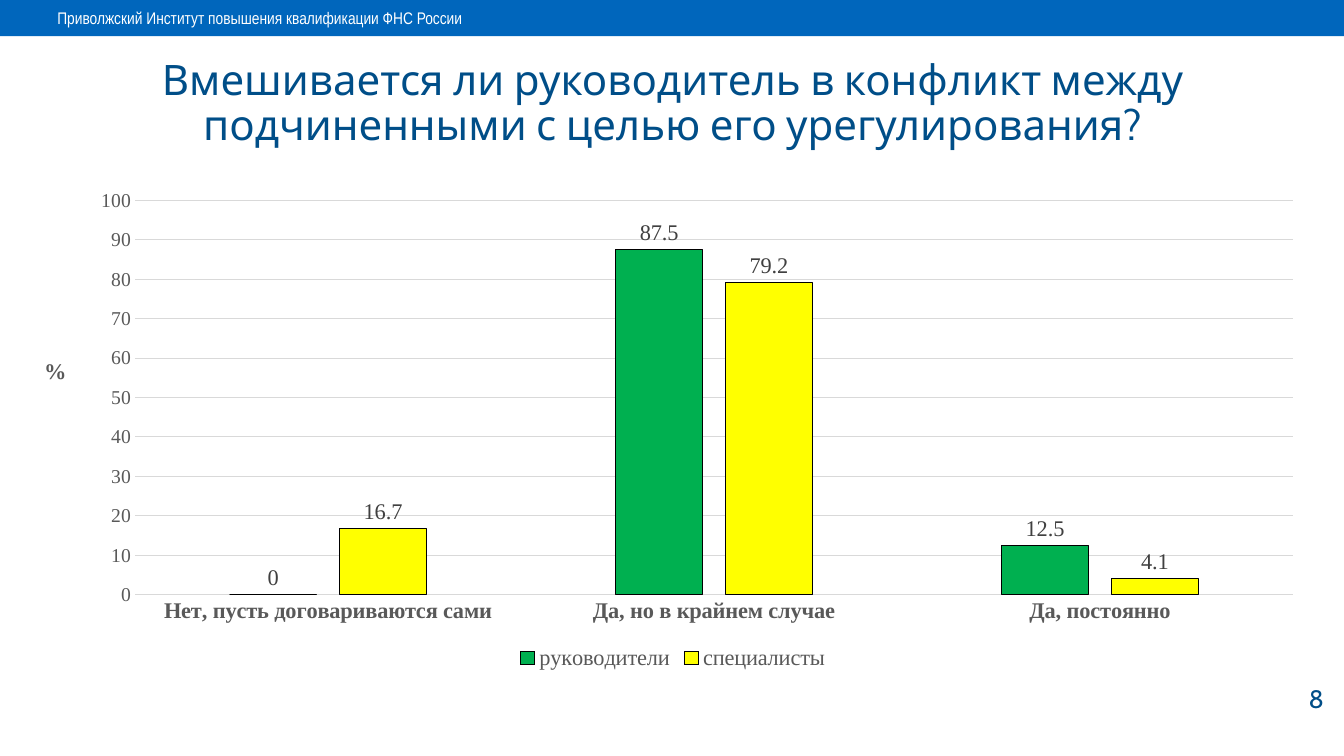
"""Builds a survey slide with a clustered column chart comparing managers and specialists."""
import lxml.etree
import pptx
import pptx.chart.data
import pptx.dml.color
import pptx.enum.chart
import pptx.enum.shapes
import pptx.enum.text
import pptx.oxml
import pptx.oxml.ns
import pptx.util

HEADER = "Приволжский Институт повышения квалификации ФНС России"
TITLE = "Вмешивается ли руководитель в конфликт между подчиненными с целью его урегулирования?"
PAGE_NUMBER = "8"
UNIT_LABEL = "%"
ANSWERS = ["Нет, пусть договариваются сами", "Да, но в крайнем случае", "Да, постоянно"]
GROUPS = [
    ("руководители", (0, 87.5, 12.5), "00B050"),
    ("специалисты", (16.7, 79.2, 4.1), "FFFF00"),
]
THEME = {
    "banner": "0066BC", "white": "FFFFFF", "heading": "004E88",
    "axis_text": "595959", "label_text": "404040", "grid": "D9D9D9", "outline": "000000",
    "narrow": "Arial Narrow", "sans": "Cabin", "serif": "Times New Roman",
    "header_size": 12, "title_size": 30, "number_size": 18,
    "chart_size": 16, "scale_size": 14, "hairline": 0.75,
}
COLUMNS, ROWS = 1333, 750
CELL = pptx.util.Inches(0.01)
MARGIN = 27
CONTENT_WIDTH = COLUMNS - 2 * MARGIN + 2
ALIGN = pptx.enum.text.PP_ALIGN


def place(column, row, width, height):
    return [CELL * cells for cells in (column, row, width, height)]


def color(name):
    return pptx.dml.color.RGBColor.from_string(THEME.get(name, name))


def style(font, size, tint, face="serif", bold=False):
    font.size = pptx.util.Pt(THEME[size])
    font.name = THEME[face]
    font.bold = bold
    font.color.rgb = color(tint)


def outline(line, tint):
    line.color.rgb = color(tint)
    line.width = pptx.util.Pt(THEME["hairline"])


def add_text(page, text, area, size, tint, face, align=ALIGN.LEFT, middle=False, spacing=1.0):
    frame = page.shapes.add_textbox(*place(*area)).text_frame
    frame.word_wrap = True
    if middle:
        frame.vertical_anchor = pptx.enum.text.MSO_ANCHOR.MIDDLE
    para = frame.paragraphs[0]
    para.alignment = align
    para.line_spacing = spacing
    span = para.add_run()
    span.text = text
    style(span.font, size, tint, face)


def add_unit_title(axis):
    frame = axis.axis_title.text_frame
    frame.text = UNIT_LABEL
    style(frame.paragraphs[0].runs[0].font, "chart_size", "axis_text", bold=True)
    body = frame._txBody.find(pptx.oxml.ns.qn("a:bodyPr"))
    body.set("rot", "0")
    body.set("vert", "horz")
    title = axis.axis_title._element
    for old in title.findall(pptx.oxml.ns.qn("c:layout")):
        title.remove(old)
    layout = pptx.oxml.parse_xml(
        f'<c:layout {pptx.oxml.ns.nsdecls("c")}><c:manualLayout>'
        '<c:xMode val="edge"/><c:yMode val="edge"/><c:x val="0.01"/><c:y val="0.35"/>'
        '</c:manualLayout></c:layout>')
    title.find(pptx.oxml.ns.qn("c:tx")).addnext(layout)


def add_survey_chart(page, area):
    kinds = pptx.enum.chart
    data = pptx.chart.data.CategoryChartData()
    data.categories = ANSWERS
    for name, shares, _ in GROUPS:
        data.add_series(name, shares)
    chart = page.shapes.add_chart(
        kinds.XL_CHART_TYPE.COLUMN_CLUSTERED, *place(*area), data).chart
    chart.has_title = False
    style(chart.font, "chart_size", "axis_text")
    chart.has_legend = True
    chart.legend.position = kinds.XL_LEGEND_POSITION.BOTTOM
    chart.legend.include_in_layout = False
    style(chart.legend.font, "chart_size", "axis_text")

    answers, scale = chart.category_axis, chart.value_axis
    for axis in (answers, scale):
        axis.major_tick_mark = axis.minor_tick_mark = kinds.XL_TICK_MARK.NONE
    style(answers.tick_labels.font, "chart_size", "axis_text", bold=True)
    outline(answers.format.line, "grid")
    style(scale.tick_labels.font, "scale_size", "axis_text")
    scale.minimum_scale, scale.maximum_scale, scale.major_unit = 0, 100, 10
    scale.format.line.fill.background()
    outline(scale.major_gridlines.format.line, "grid")
    add_unit_title(scale)

    plot = chart.plots[0]
    plot.vary_by_categories = False
    plot.gap_width, plot.overlap = 219, -27
    for series, (_, _, tint) in zip(plot.series, GROUPS):
        series.format.fill.solid()
        series.format.fill.fore_color.rgb = color(tint)
        outline(series.format.line, "outline")
        labels = series.data_labels
        labels.show_value = True
        labels.position = kinds.XL_LABEL_POSITION.OUTSIDE_END
        style(labels.font, "chart_size", "label_text")


def main():
    deck = pptx.Presentation()
    deck.slide_width, deck.slide_height = CELL * COLUMNS, CELL * ROWS
    page = deck.slides.add_slide(deck.slide_layouts[6])
    banner = page.shapes.add_shape(
        pptx.enum.shapes.MSO_SHAPE.RECTANGLE, *place(0, 0, COLUMNS, 36))
    banner.shadow.inherit = False
    banner.fill.solid()
    banner.fill.fore_color.rgb = color("banner")
    banner.line.fill.background()
    add_text(page, HEADER, (47, 3, 1218, 30), "header_size", "white", "narrow")
    add_text(page, PAGE_NUMBER, (1234, 673, 89, 40), "number_size", "heading", "sans",
             align=ALIGN.RIGHT)
    add_text(page, TITLE, (MARGIN, 60, CONTENT_WIDTH, 87), "title_size", "heading", "sans",
             align=ALIGN.CENTER, middle=True, spacing=0.9)
    add_survey_chart(page, (MARGIN, 178, CONTENT_WIDTH, 492))
    deck.save("out.pptx")


if __name__ == "__main__":
    main()
